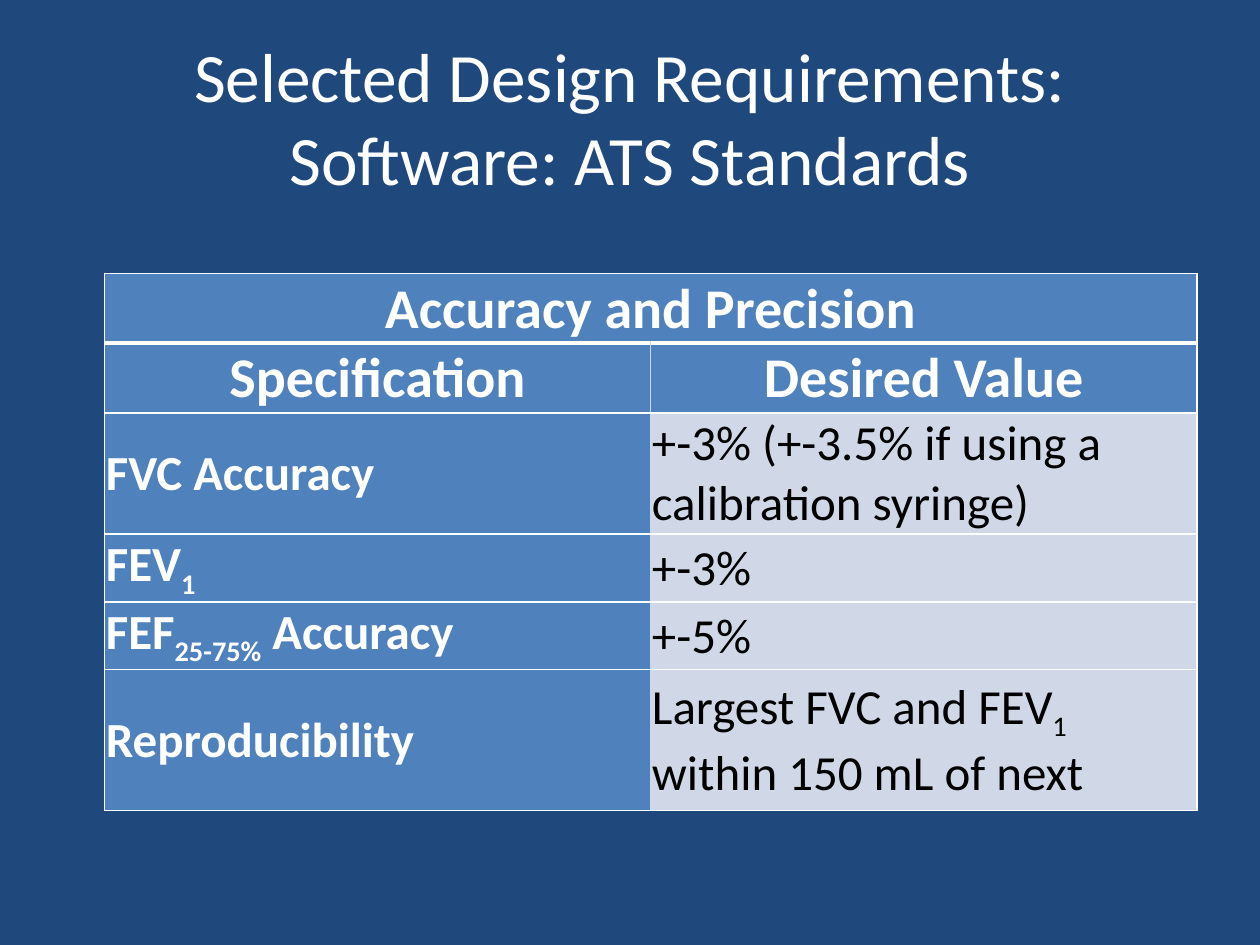
from lxml.etree import SubElement
from pptx import Presentation
from pptx.dml.color import RGBColor
from pptx.enum.text import MSO_ANCHOR, PP_ALIGN
from pptx.oxml.ns import qn
from pptx.util import Inches, Pt

TITLE = "Selected Design Requirements: Software: ATS Standards"
HEADING = "Accuracy and Precision"
COLUMN_HEADS = ("Specification", "Desired Value")
REQUIREMENTS = [
    (["FVC Accuracy"], ["+-3% (+-3.5% if using a calibration syringe)"]),
    (["FEV", "1"], ["+-3%"]),
    (["FEF", "25-75%", " Accuracy"], ["+-5%"]),
    (["Reproducibility"], ["Largest FVC and FEV", "1 ", "within 150 mL of next"]),
]
COLORS = {
    "background": "1F497D",
    "label": "4F81BD",
    "value": "D0D8E8",
    "divider": "C6D9F1",
    "light": "FFFFFF",
    "dark": "000000",
}
FONT = "Calibri"
ROW_HEIGHTS = (0.47, 0.47, 0.82, 0.41, 0.41, 1.12)
TABLE_LEFT, TABLE_TOP, TABLE_WIDTH, TABLE_HEIGHT = 0.83, 2.17, 8.67, 4.1


def rgb(name):
    return RGBColor.from_string(COLORS[name])


def style_run(run, size, color, bold=False):
    run.font.name = FONT
    run.font.size = Pt(size)
    run.font.bold = bold
    run.font.color.rgb = rgb(color)


def add_border(cell, side, color, width):
    line = SubElement(cell._tc.get_or_add_tcPr(), qn(f"a:ln{side}"), w=str(Pt(width)))
    fill = SubElement(line, qn("a:solidFill"))
    SubElement(fill, qn("a:srgbClr"), val=COLORS[color])


def fill_cell(cell, parts, size, is_head, is_value):
    cell.margin_left = cell.margin_right = cell.margin_top = Inches(0.01)
    cell.margin_bottom = 0
    cell.vertical_anchor = MSO_ANCHOR.MIDDLE
    cell.fill.solid()
    cell.fill.fore_color.rgb = rgb("value" if is_value else "label")
    paragraph = cell.text_frame.paragraphs[0]
    paragraph.alignment = PP_ALIGN.CENTER if is_head else PP_ALIGN.LEFT
    for index, part in enumerate(parts):
        run = paragraph.add_run()
        run.text = part
        style_run(run, size, "dark" if is_value else "light", not is_value)
        if index % 2:
            run.font._element.set("baseline", "-25000")


def add_title(slide):
    title = slide.shapes.title
    title.left, title.top = Inches(0.5), Inches(0.3)
    title.width, title.height = Inches(9), Inches(1.25)
    title.text_frame.text = TITLE
    title.text_frame.word_wrap = True
    title.text_frame.vertical_anchor = MSO_ANCHOR.MIDDLE
    paragraph = title.text_frame.paragraphs[0]
    paragraph.alignment = PP_ALIGN.CENTER
    style_run(paragraph.runs[0], 39.6, "light")


def add_requirements(slide):
    rows = [([HEADING], []), tuple([head] for head in COLUMN_HEADS), *REQUIREMENTS]
    frame = slide.shapes.add_table(
        len(rows), 2, Inches(TABLE_LEFT), Inches(TABLE_TOP),
        Inches(TABLE_WIDTH), Inches(TABLE_HEIGHT))
    table = frame.table
    for column in table.columns:
        column.width = Inches(TABLE_WIDTH / 2)
    for row, height in zip(table.rows, ROW_HEIGHTS):
        row.height = Inches(height)
    frame.height = Inches(TABLE_HEIGHT)
    table.cell(0, 0).merge(table.cell(0, 1))
    for r, row in enumerate(rows):
        is_head = r < 2
        for c, parts in enumerate(row):
            cell = table.cell(r, c)
            add_border(cell, "L", "divider" if c and r else "light", 1)
            add_border(cell, "R", "light" if c or not r else "divider", 1)
            add_border(cell, "T", "light", 3 if r == 1 else 1)
            add_border(cell, "B", "light", 3 if r == 0 else 1)
            fill_cell(cell, parts, 32 if is_head else 28, is_head, c == 1 and not is_head)


def main():
    deck = Presentation()
    deck.slide_width, deck.slide_height = Inches(10), Inches(7.5)
    slide = deck.slides.add_slide(deck.slide_layouts[5])
    slide.background.fill.solid()
    slide.background.fill.fore_color.rgb = rgb("background")
    add_title(slide)
    add_requirements(slide)
    deck.save("out.pptx")


if __name__ == "__main__":
    main()
